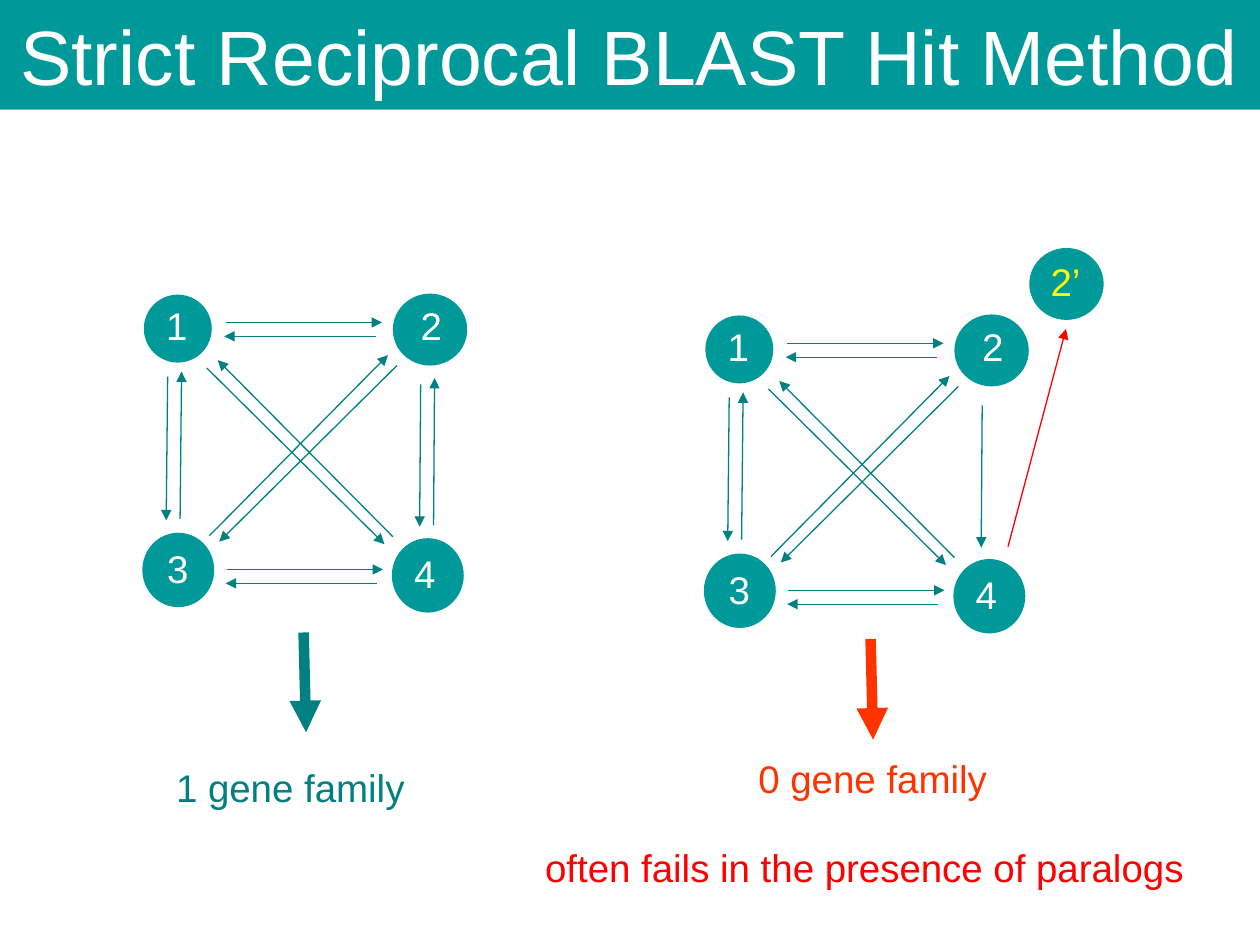
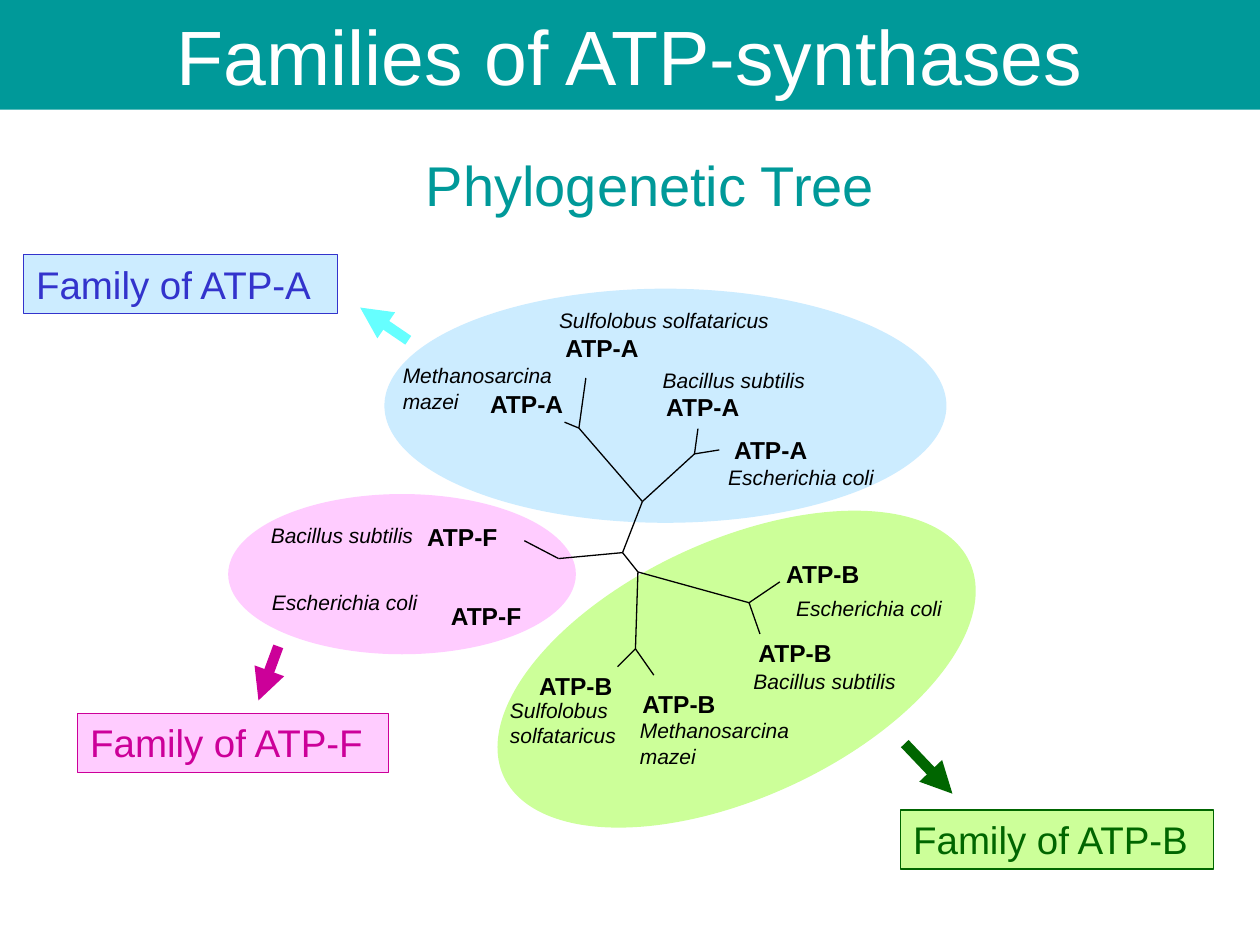
"""Build two slides on gene families: reciprocal hits and ATP-synthases."""
from dataclasses import dataclass

import lxml.etree
import pptx
import pptx.dml.color
import pptx.enum.shapes
import pptx.enum.text
import pptx.oxml.ns
import pptx.util
from pptx.util import Cm

SHAPES = pptx.enum.shapes.MSO_SHAPE
ALIGN = pptx.enum.text.PP_ALIGN
ANCHOR = pptx.enum.text.MSO_ANCHOR


@dataclass(frozen=True)
class Theme:
    font: str = "Arial"
    teal: str = "009999"
    dark_teal: str = "008080"
    white: str = "FFFFFF"
    black: str = "000000"
    yellow: str = "FFFF00"
    red: str = "FF0000"
    orange: str = "FF3300"
    title_size: int = 44
    heading_size: int = 32
    body_size: int = 22
    gene_size: int = 14
    species_size: int = 12
    thin: float = 0.75
    thick: float = 6


THEME = Theme()
PAGE_SIZE = (25.4, 19.05)
BAND_HEIGHT = 2.21
LINE_HEIGHT = 1.19

HIT_TITLE = "Strict Reciprocal BLAST Hit Method"
GENES = [
    ("1", (2.9, 5.94, 1.37, 1.37), (3.1, 5.97)),
    ("2", (7.92, 5.92, 1.5, 1.45), (8.23, 5.97)),
    ("3", (2.87, 10.74, 1.45, 1.5), (3.12, 10.87)),
    ("4", (7.9, 10.85, 1.45, 1.5), (8.1, 10.97)),
]
HITS = {
    ("1", "2"): (4.55, 6.5, 7.7, 6.5),
    ("2", "1"): (7.57, 6.78, 4.52, 6.78),
    ("2", "4"): (8.48, 7.75, 8.46, 10.62),
    ("4", "2"): (8.74, 10.59, 8.76, 7.62),
    ("3", "4"): (4.57, 11.48, 7.72, 11.48),
    ("4", "3"): (7.59, 11.76, 4.55, 11.76),
    ("1", "3"): (3.38, 7.59, 3.35, 10.49),
    ("3", "1"): (3.63, 10.46, 3.66, 7.49),
    ("1", "4"): (4.17, 7.42, 7.75, 10.97),
    ("4", "1"): (7.92, 10.82, 4.39, 7.26),
    ("3", "2"): (4.22, 10.8, 7.82, 7.16),
    ("2", "3"): (8, 7.37, 4.42, 10.92),
}
NETWORKS = [
    {"shift": (0, 0), "missing": [], "color": THEME.dark_teal,
     "arrow": (6.12, 12.75, 6.17, 14.76),
     "result": "1 gene family", "result_at": (3.3, 15.27)},
    {"shift": (11.32, 0.42), "missing": [("4", "2")], "color": THEME.orange,
     "arrow": (17.55, 12.88, 17.6, 14.91),
     "result": "0 gene family", "result_at": (15.04, 15.09)},
]
PARALOG = ("2’", (20.75, 5, 1.5, 1.45), (20.93, 5.08))
PARALOG_HIT = (20.32, 11.02, 21.49, 6.63)
WARNING = "often fails in the presence of paralogs"
WARNING_AREA = (10.74, 16.89, 14.66, LINE_HEIGHT)

TREE_TITLE = "Families of ATP-synthases"
TREE_HEADING = "Phylogenetic Tree"
HEADING_AREA = (4.88, 2.9, 16.46, 1.6)
FAMILIES = [
    {"gene": "ATP-F", "fill": "FFCCFF", "ink": "CC0099", "arrow_color": "CC0099",
     "region": (4.6, 9.96, 7.01, 3.23), "rotation": 0,
     "arrow": (5.61, 13.03, 5.21, 14.12), "box": (1.57, 14.38, 6.27, LINE_HEIGHT),
     "members": [("Bacillus subtilis", (8.36, 10.39), (5.21, 10.41)),
                 ("Escherichia coli", (8.84, 11.99), (5.23, 11.76))]},
    {"gene": "ATP-B", "fill": "CCFF99", "ink": "006600", "arrow_color": "006600",
     "region": (9.68, 10.9, 10.34, 5.18), "rotation": 335.3,
     "arrow": (18.24, 14.99, 19.2, 16), "box": (18.16, 16.33, 6.3, LINE_HEIGHT),
     "members": [("Sulfolobus\nsolfataricus", (10.62, 13.41), (10.03, 13.94)),
                 ("Methanosarcina\nmazei", (12.7, 13.77), (12.65, 14.35)),
                 ("Escherichia coli", (15.6, 11.15), (15.8, 11.89)),
                 ("Bacillus subtilis", (15.04, 12.73), (14.94, 13.36))]},
    {"gene": "ATP-A", "fill": "CCECFF", "ink": "3333CC", "arrow_color": "66FFFF",
     "region": (7.75, 5.82, 11.33, 4.72), "rotation": 0,
     "arrow": (8.23, 6.86, 7.26, 6.2), "box": (0.48, 5.13, 6.32, LINE_HEIGHT),
     "members": [("Sulfolobus solfataricus", (11.15, 6.58), (11.02, 6.07)),
                 ("Methanosarcina\nmazei", (9.63, 7.72), (7.87, 7.19)),
                 ("Bacillus subtilis", (13.18, 7.77), (13.11, 7.29)),
                 ("Escherichia coli", (14.55, 8.64), (14.43, 9.25))]},
]
SPECIES_WIDTHS = {"Sulfolobus": 4.83, "Methanosarcina": 3.66,
                  "Bacillus": 3.51, "Escherichia": 3.81}
JOINTS = {
    "hub": (12.55, 11.14),
    "A": (12.95, 10.11), "A archaea": (11.67, 8.63), "A bacteria": (14, 9.15),
    "F": (11.26, 11.26),
    "B": (12.86, 11.53), "B archaea": (12.81, 13.08), "B bacteria": (15.1, 12.15),
}
FORKS = [("hub", "A"), ("A", "A archaea"), ("A", "A bacteria"), ("hub", "F"),
         ("hub", "B"), ("B", "B archaea"), ("B", "B bacteria")]
TIPS = {
    "A archaea": [(11.38, 8.51), (11.81, 7.62)],
    "A bacteria": [(14.07, 8.64), (14.5, 9.07)],
    "F": [(10.57, 10.9)],
    "B archaea": [(13.18, 13.61), (12.45, 13.44)],
    "B bacteria": [(15.32, 12.78), (15.72, 11.73)],
}


def rgb(color):
    return pptx.dml.color.RGBColor.from_string(color)


def add_block(page, kind, area, fill, outline=None):
    block = page.shapes.add_shape(kind, *map(Cm, area))
    block.shadow.inherit = False
    block.fill.solid()
    block.fill.fore_color.rgb = rgb(fill)
    if outline:
        block.line.color.rgb = rgb(outline)
        block.line.width = pptx.util.Pt(THEME.thin)
    else:
        block.line.fill.background()
    return block


def write(box, text, size, color, align=ALIGN.LEFT, anchor=ANCHOR.TOP,
          wrap=True, bold=False, italic=False):
    frame = box.text_frame
    frame.word_wrap = wrap
    frame.vertical_anchor = anchor
    for index, line in enumerate(text.split("\n")):
        para = frame.add_paragraph() if index else frame.paragraphs[0]
        para.alignment = align
        span = para.add_run()
        span.text = line
        span.font.name = THEME.font
        span.font.size = pptx.util.Pt(size)
        span.font.color.rgb = rgb(color)
        span.font.bold = bold
        span.font.italic = italic


def add_text(page, area, text, size, color, **style):
    write(page.shapes.add_textbox(*map(Cm, area)), text, size, color, **style)


def add_line(page, ends, color, width=THEME.thin, arrow=True):
    line = page.shapes.add_connector(
        pptx.enum.shapes.MSO_CONNECTOR.STRAIGHT, *map(Cm, ends))
    line.line.color.rgb = rgb(color)
    line.line.width = pptx.util.Pt(width)
    qn = pptx.oxml.ns.qn
    properties = line.element.find(qn("p:spPr"))
    if arrow:
        outline = properties.find(qn("a:ln"))
        lxml.etree.SubElement(outline, qn("a:tailEnd"), type="triangle")
    lxml.etree.SubElement(properties, qn("a:effectLst"))


def add_page(deck, title):
    page = deck.slides.add_slide(deck.slide_layouts[6])
    band = add_block(page, SHAPES.RECTANGLE, (0, 0, PAGE_SIZE[0], BAND_HEIGHT), THEME.teal)
    write(band, title, THEME.title_size, THEME.white, ALIGN.CENTER, ANCHOR.MIDDLE)
    return page


def add_gene(page, gene, shift=(0, 0), color=THEME.white):
    name, (left, top, width, height), (label_left, label_top) = gene
    right, down = shift
    add_block(page, SHAPES.OVAL, (left + right, top + down, width, height), THEME.teal)
    label_width = 0.97 if len(name) == 1 else 1.12
    add_text(page, (label_left + right, label_top + down, label_width, LINE_HEIGHT),
             name, THEME.body_size, color, wrap=False)


def build_hits(deck):
    page = add_page(deck, HIT_TITLE)
    for network in NETWORKS:
        for gene in GENES:
            add_gene(page, gene, network["shift"])
        for pair, ends in HITS.items():
            if pair not in network["missing"]:
                moved = [a + b for a, b in zip(ends, network["shift"] * 2)]
                add_line(page, moved, THEME.dark_teal)
        add_line(page, network["arrow"], network["color"], THEME.thick)
        add_text(page, (*network["result_at"], 5.33, LINE_HEIGHT), network["result"],
                 THEME.body_size, network["color"], wrap=False)
    add_gene(page, PARALOG, color=THEME.yellow)
    add_line(page, PARALOG_HIT, THEME.red)
    add_text(page, WARNING_AREA, WARNING, THEME.body_size, THEME.red)


def add_member(page, gene, member):
    species, gene_at, species_at = member
    add_text(page, (*gene_at, 2.03, 0.86), gene, THEME.gene_size, THEME.black,
             wrap=False, bold=True)
    height = 1.27 if "\n" in species else 0.76
    add_text(page, (*species_at, SPECIES_WIDTHS[species.split()[0]], height), species,
             THEME.species_size, THEME.black, italic=True)


def build_tree(deck):
    page = add_page(deck, TREE_TITLE)
    for family in FAMILIES:
        region = add_block(page, SHAPES.OVAL, family["region"], family["fill"])
        region.rotation = family["rotation"]
    branches = [(JOINTS[start], JOINTS[end]) for start, end in FORKS]
    branches += [(JOINTS[joint], tip) for joint, tips in TIPS.items() for tip in tips]
    for start, end in branches:
        add_line(page, start + end, THEME.black, arrow=False)
    for family in FAMILIES:
        for member in family["members"]:
            add_member(page, family["gene"], member)
        add_line(page, family["arrow"], family["arrow_color"], THEME.thick)
        box = add_block(page, SHAPES.RECTANGLE, family["box"], family["fill"], family["ink"])
        write(box, f"Family of {family['gene']}", THEME.body_size, family["ink"])
    heading = add_block(page, SHAPES.RECTANGLE, HEADING_AREA, THEME.white)
    write(heading, TREE_HEADING, THEME.heading_size, THEME.teal, ALIGN.CENTER)


def main():
    deck = pptx.Presentation()
    deck.slide_width, deck.slide_height = map(Cm, PAGE_SIZE)
    build_hits(deck)
    build_tree(deck)
    deck.save("out.pptx")


if __name__ == "__main__":
    main()
